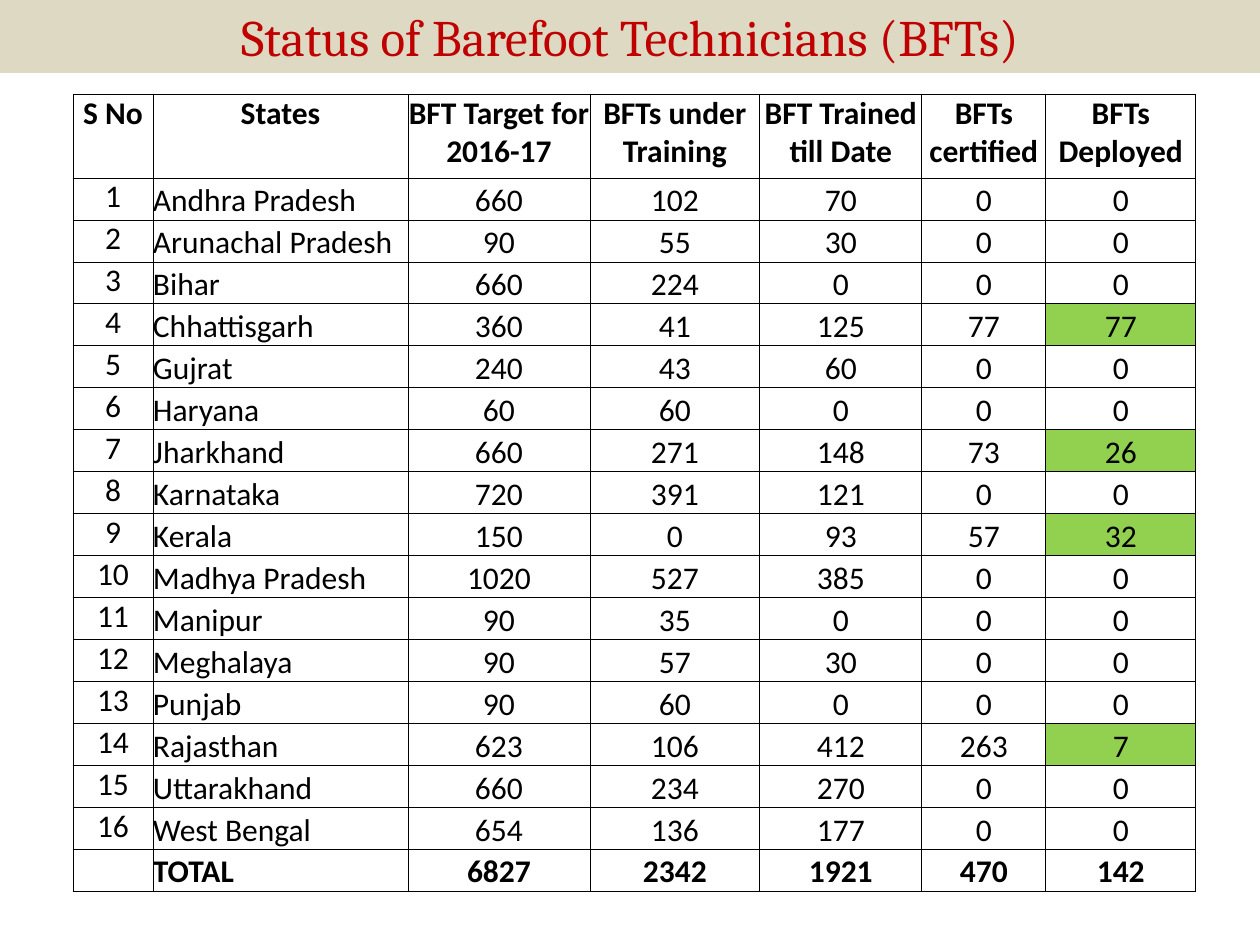
import pptx
import pptx.dml.color
import pptx.enum.shapes
import pptx.enum.text
import pptx.oxml
import pptx.oxml.ns
import pptx.util

ALIGN = pptx.enum.text.PP_ALIGN
ANCHOR = pptx.enum.text.MSO_ANCHOR

HEADINGS = ["S No", "States", "BFT Target for 2016-17", "BFTs under Training",
            "BFT Trained till Date", "BFTs certified", "BFTs Deployed"]
COLUMN_WIDTHS = [80, 255, 182, 170, 162, 124, 150]
HEADER_HEIGHT, ROW_HEIGHT = 84, 42
STATES = [
    ("Andhra Pradesh", 660, 102, 70, 0, 0),
    ("Arunachal Pradesh", 90, 55, 30, 0, 0),
    ("Bihar", 660, 224, 0, 0, 0),
    ("Chhattisgarh", 360, 41, 125, 77, 77),
    ("Gujrat", 240, 43, 60, 0, 0),
    ("Haryana", 60, 60, 0, 0, 0),
    ("Jharkhand", 660, 271, 148, 73, 26),
    ("Karnataka", 720, 391, 121, 0, 0),
    ("Kerala", 150, 0, 93, 57, 32),
    ("Madhya Pradesh", 1020, 527, 385, 0, 0),
    ("Manipur", 90, 35, 0, 0, 0),
    ("Meghalaya", 90, 57, 30, 0, 0),
    ("Punjab", 90, 60, 0, 0, 0),
    ("Rajasthan", 623, 106, 412, 263, 7),
    ("Uttarakhand", 660, 234, 270, 0, 0),
    ("West Bengal", 654, 136, 177, 0, 0),
]
TOTAL = ("", "TOTAL", 6827, 2342, 1921, 470, 142)


def px(length):
    return pptx.util.Emu(round(length * 914400 / 126))


def color(value):
    return pptx.dml.color.RGBColor.from_string(value)


class StatusSlide:
    """Draws the banner and the status table in one shared style."""

    banner_fill, banner_text = "DDD9C3", "C00000"
    ink, highlight = "000000", "92D050"
    banner_font, table_font = "Cambria", "Calibri"

    def __init__(self, deck):
        self.page = deck.slides.add_slide(deck.slide_layouts[6])

    def add_text(self, frame, text, font, size, ink, align, bold=False):
        para = frame.paragraphs[0]
        para.alignment = align
        para.font.size = pptx.util.Pt(size)
        if text:
            span = para.add_run()
            span.text = text
            span.font.name = font
            span.font.size = pptx.util.Pt(size)
            span.font.bold = bold
            span.font.color.rgb = color(ink)

    def banner(self, text, width, height):
        box = self.page.shapes.add_shape(
            pptx.enum.shapes.MSO_SHAPE.RECTANGLE, 0, 0, px(width), px(height))
        box.shadow.inherit = False
        box.fill.solid()
        box.fill.fore_color.rgb = color(self.banner_fill)
        box.line.fill.background()
        frame = box.text_frame
        frame.word_wrap = True
        frame.vertical_anchor = ANCHOR.MIDDLE
        self.add_text(frame, text, self.banner_font, 29.2, self.banner_text, ALIGN.CENTER)

    def border(self, cell):
        properties = cell._tc.get_or_add_tcPr()
        for side in ("lnL", "lnR", "lnT", "lnB"):
            properties.append(pptx.oxml.parse_xml(
                f'<a:{side} {pptx.oxml.ns.nsdecls("a")} w="6350"><a:solidFill>'
                f'<a:srgbClr val="{self.ink}"/></a:solidFill></a:{side}>'))

    def cell(self, cell, text, align, anchor, bold, fill):
        cell.margin_left = cell.margin_right = cell.margin_top = cell.margin_bottom = 0
        cell.vertical_anchor = anchor
        self.border(cell)
        if fill:
            cell.fill.solid()
            cell.fill.fore_color.rgb = color(fill)
        else:
            cell.fill.background()
        self.add_text(cell.text_frame, text, self.table_font, 18, self.ink, align, bold)

    def table(self, rows, left, top):
        last = len(rows) - 1
        height = HEADER_HEIGHT + last * ROW_HEIGHT
        grid = self.page.shapes.add_table(
            len(rows), len(COLUMN_WIDTHS), px(left), px(top),
            px(sum(COLUMN_WIDTHS)), px(height)).table
        grid.first_row = grid.horz_banding = False
        for column, width in zip(grid.columns, COLUMN_WIDTHS):
            column.width = px(width)
        for r, values in enumerate(rows):
            grid.rows[r].height = px(ROW_HEIGHT if r else HEADER_HEIGHT)
            for c, value in enumerate(values):
                deployed = 0 < r < last and c == len(values) - 1 and value > 0
                self.cell(
                    grid.cell(r, c), str(value),
                    align=ALIGN.LEFT if r and c == 1 else ALIGN.CENTER,
                    anchor=ANCHOR.BOTTOM if r and c else ANCHOR.TOP,
                    bold=r in (0, last),
                    fill=self.highlight if deployed else None)


def main():
    deck = pptx.Presentation()
    deck.slide_width, deck.slide_height = px(1260), px(945)
    slide = StatusSlide(deck)
    slide.banner("Status of Barefoot Technicians (BFTs)", 1260, 73)
    numbered = [(number, *state) for number, state in enumerate(STATES, 1)]
    slide.table([HEADINGS, *numbered, TOTAL], 73, 94)
    deck.save("out.pptx")


if __name__ == "__main__":
    main()
